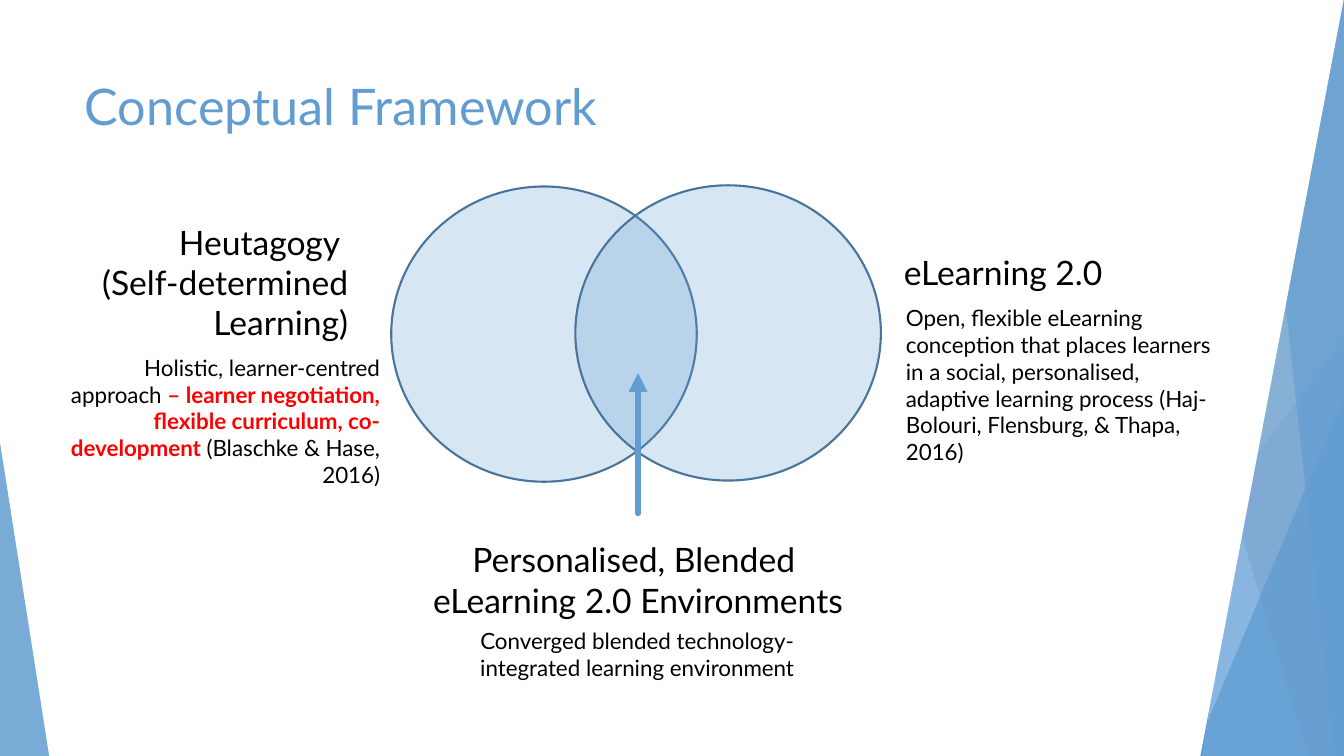
from lxml.etree import SubElement
from pptx import Presentation
from pptx.dml.color import RGBColor
from pptx.enum.shapes import MSO_CONNECTOR, MSO_SHAPE
from pptx.enum.text import MSO_ANCHOR, MSO_AUTO_SIZE, PP_ALIGN
from pptx.oxml.ns import qn
from pptx.util import Cm, Pt

BLUE = RGBColor(0x62, 0x9D, 0xD1)
MID = RGBColor(0x29, 0x7F, 0xD5)
DEEP = RGBColor(0x1F, 0x5F, 0xA0)
PALE = RGBColor(0xA1, 0xC4, 0xE3)
EDGE = RGBColor(0x49, 0x74, 0x9B)
RED = RGBColor(0xFF, 0x00, 0x00)
BLACK = RGBColor(0x00, 0x00, 0x00)
WHITE = RGBColor(0xFF, 0xFF, 0xFF)

FONT = "Lato"
WIDE, HIGH = 33.87, 19.05
HEAD, BODY = 24, 16
LEFT, MIDDLE, RIGHT = PP_ALIGN.LEFT, PP_ALIGN.CENTER, PP_ALIGN.RIGHT


def paint(shape, color, alpha=100):
    """Fill a shape with a colour at the given opacity in percent."""
    shape.shadow.inherit = False
    shape.line.fill.background()
    shape.fill.solid()
    shape.fill.fore_color.rgb = color
    if alpha < 100:
        tint = shape.element.spPr.find(qn("a:solidFill"))[0]
        SubElement(tint, qn("a:alpha"), val=str(alpha * 1000))


def add_band(slide, top, foot, color, alpha=100, sides=(WIDE, WIDE)):
    """Draw a full-height band; top and foot give its left edge."""
    edge = [(sides[0], 0), (sides[1], HIGH), (foot, HIGH)]
    pen = slide.shapes.build_freeform(Cm(top), 0)
    pen.add_line_segments([(Cm(x), Cm(y)) for x, y in edge], close=True)
    paint(pen.convert_to_shape(), color, alpha)


def add_wedge(slide, box, peak, color, alpha):
    wedge = slide.shapes.add_shape(MSO_SHAPE.ISOSCELES_TRIANGLE, *map(Cm, box))
    wedge.adjustments[0] = peak
    paint(wedge, color, alpha)


def add_ring(slide, left, top):
    ring = slide.shapes.add_shape(
        MSO_SHAPE.OVAL, Cm(left), Cm(top), Cm(7.7), Cm(7.44))
    paint(ring, BLUE, 25)
    ring.line.color.rgb = EDGE
    ring.line.width = Pt(1.5)


def add_run(para, text, size, color=BLACK, bold=False):
    run = para.add_run()
    run.text = text
    font = run.font
    font.name, font.size, font.bold = FONT, Pt(size), bold
    font.color.rgb = color


def add_text(slide, box, size, align, *paras):
    """Add a text box; each paragraph is a list of (text, format...) runs."""
    frame = slide.shapes.add_textbox(*map(Cm, box)).text_frame
    frame.word_wrap = True
    frame.auto_size = MSO_AUTO_SIZE.SHAPE_TO_FIT_TEXT
    for i, runs in enumerate(paras):
        para = frame.paragraphs[0] if i == 0 else frame.add_paragraph()
        para.alignment = align
        for text, *style in runs:
            add_run(para, text, size, *style)


def add_arrow(slide, x, start, end):
    arrow = slide.shapes.add_connector(
        MSO_CONNECTOR.STRAIGHT, Cm(x), Cm(start), Cm(x), Cm(end))
    arrow.line.color.rgb = BLUE
    arrow.line.width = Pt(4.5)
    props = arrow.element.spPr
    line = props.find(qn("a:ln"))
    line.set("cap", "rnd")
    SubElement(line, qn("a:tailEnd"), type="triangle")
    SubElement(props, qn("a:effectLst"))


def set_title(slide, text):
    title = slide.shapes.title
    title.left, title.top = Cm(1.88), Cm(1.7)
    title.width, title.height = Cm(23.88), Cm(1.93)
    frame = title.text_frame
    frame.word_wrap = True
    frame.auto_size = MSO_AUTO_SIZE.NONE
    frame.vertical_anchor = MSO_ANCHOR.MIDDLE
    para = frame.paragraphs[0]
    para.alignment = LEFT
    add_run(para, text, 36, BLUE)
    # Bring the title in front of the backdrop
    title.element.getparent().append(title.element)


def add_facets(slide):
    add_band(slide, 31.6, 26.75, BLUE, 30)
    add_band(slide, 27.36, 30.4, BLUE, 20)
    add_wedge(slide, (26.01, 8.46, 7.9, 10.59), 1, MID, 72)
    add_band(slide, 27.23, 32.97, DEEP, 70)
    add_band(slide, 33.15, 30.3, PALE, 70)
    add_band(slide, 31.57, 33.63, BLUE, 65)
    add_wedge(slide, (30.07, 9.98, 3.81, 9.07), 1, BLUE, 80)
    add_wedge(slide, (0, 11.15, 1.24, 7.9), 0, BLUE, 85)
    # White panel that trims the facets to a slanted edge
    add_band(slide, 22.15, 22.15, WHITE, sides=(33.86, 30.25))


def main():
    deck = Presentation()
    deck.slide_width, deck.slide_height = Cm(WIDE), Cm(HIGH)
    slide = deck.slides.add_slide(deck.slide_layouts[5])

    # Backdrop and title
    add_facets(slide)
    set_title(slide, "Conceptual Framework")

    # Overlapping circles
    add_ring(slide, 9.86, 4.7)
    add_ring(slide, 14.5, 4.67)

    # Headings
    add_text(slide, (9.91, 13.46, 12.34, 2.31), HEAD, MIDDLE,
             [("Personalised, Blended ",)], [("eLearning 2.0 Environments",)])
    add_text(slide, (22.53, 6.22, 5.94, 1.27), HEAD, LEFT,
             [("eLearning 2.0",)])
    add_text(slide, (1.6, 5.46, 7.42, 3.33), HEAD, RIGHT,
             [("Heutagogy ",)], [("(Self-determined Learning)",)])

    # Pointer to the overlap
    add_arrow(slide, 16.08, 12.93, 9.4)

    # Descriptions
    add_text(slide, (1.14, 8.79, 8.69, 3.68), BODY, RIGHT,
             [("Holistic, learner-centred approach ",),
              ("– learner negotiation, flexible curriculum, "
               "co-development ", RED, True),
              ("(Blaschke & Hase, 2016)",)])
    add_text(slide, (22.58, 7.54, 8.41, 4.37), BODY, LEFT,
             [("Open, flexible eLearning conception that places learners "
               "in a social, personalised, adaptive learning process "
               "(Haj-Bolouri, Flensburg, & Thapa, 2016)",)])
    add_text(slide, (10.69, 15.67, 10.74, 1.63), BODY, MIDDLE,
             [("Converged blended technology-integrated "
               "learning environment",)])

    deck.save("out.pptx")


if __name__ == "__main__":
    main()
